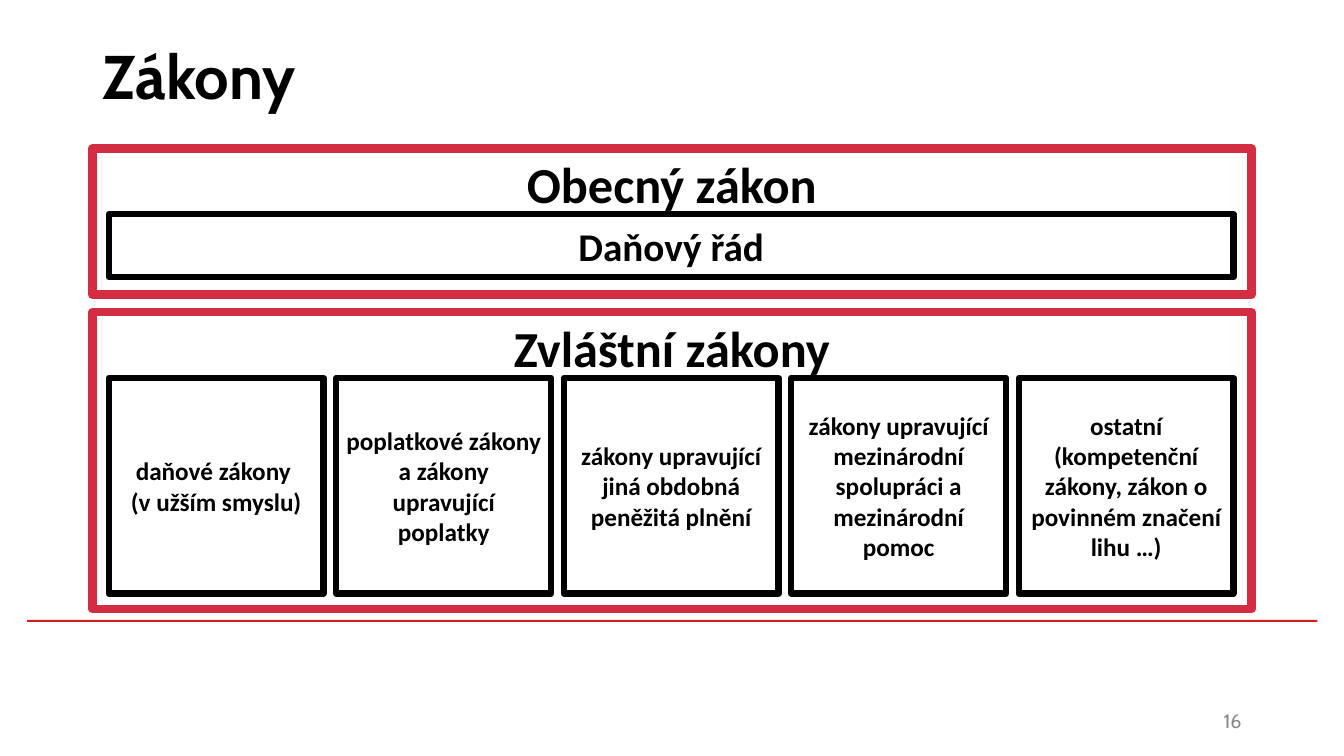
from dataclasses import dataclass

from pptx import Presentation
from pptx.dml.color import RGBColor
from pptx.enum.shapes import MSO_SHAPE
from pptx.enum.text import MSO_ANCHOR, PP_ALIGN
from pptx.util import Pt


@dataclass(frozen=True)
class Theme:
    """Colours, fonts and sizes of the slide."""
    black: str = "000000"
    white: str = "FFFFFF"
    frame: str = "D22D40"
    rule: str = "CD1F21"
    grey: str = "8C8C8C"
    head_font: str = "Cabin"
    body_font: str = "Calibri"
    title: int = 44
    heading: int = 36
    code: int = 28
    card: int = 18
    number: int = 14
    frame_line: float = 6
    card_line: float = 4.5


T = Theme()
SPECIAL_LAWS = [
    "daňové zákony \v(v užším smyslu)",
    "poplatkové zákony a zákony upravující poplatky",
    "zákony upravující jiná obdobná peněžitá plnění",
    "zákony upravující mezinárodní spolupráci a mezinárodní pomoc",
    "ostatní (kompetenční zákony, zákon o povinném značení lihu …)",
]


def write(sp, text, size, font=T.body_font, color=T.black, bold=True,
          align=PP_ALIGN.CENTER, anchor=MSO_ANCHOR.MIDDLE):
    """Put formatted text into a shape."""
    tf = sp.text_frame
    tf.word_wrap = True
    tf.vertical_anchor = anchor
    p = tf.paragraphs[0]
    p.text = text
    p.alignment = align
    for r in p.runs:
        r.font.size = Pt(size)
        r.font.name = font
        r.font.bold = bold
        r.font.color.rgb = RGBColor.from_string(color)


def add_box(s, box, fill=T.white, line=None, width=0):
    """Draw a rectangle, outlined if a line colour is given."""
    sp = s.shapes.add_shape(MSO_SHAPE.RECTANGLE, *map(Pt, box))
    sp.shadow.inherit = False
    sp.fill.solid()
    sp.fill.fore_color.rgb = RGBColor.from_string(fill)
    if line:
        sp.line.color.rgb = RGBColor.from_string(line)
        sp.line.width = Pt(width)
    else:
        sp.line.fill.background()
    return sp


def add_label(s, box, text, size, **fmt):
    """Add a text box."""
    write(s.shapes.add_textbox(*map(Pt, box)), text, size, **fmt)


def add_group(s, box, heading, laws, size, card_height, gap=9):
    """Draw a headed frame with a row of equal cards inside."""
    x, y, w, h = box
    frame = add_box(s, box, line=T.frame, width=T.frame_line)
    write(frame, heading, T.heading, anchor=MSO_ANCHOR.TOP)
    left, inner = x + 11.7, w - 24.5
    card_width = (inner - gap * (len(laws) - 1)) / len(laws)
    for i, law in enumerate(laws):
        card = add_box(s, (left + i * (card_width + gap), y + 47,
                           card_width, card_height),
                       line=T.black, width=T.card_line)
        write(card, law, size)


def build_slide(prs):
    """Compose the overview of laws."""
    s = prs.slides.add_slide(prs.slide_layouts[6])
    add_box(s, (19.4, 442.8, 921.6, 1.5), fill=T.rule)
    add_label(s, (66, 1.5, 828, 104.5), "Zákony", T.title,
              font=T.head_font, align=PP_ALIGN.LEFT)
    add_group(s, (66, 223, 828, 212), "Zvláštní zákony", SPECIAL_LAWS,
              T.card, 154)
    add_group(s, (66, 106, 828, 104.5), "Obecný zákon", ["Daňový řád"],
              T.code, 45)
    add_label(s, (678, 500.5, 216, 28.8), "16", T.number, font=T.head_font,
              color=T.grey, bold=False, align=PP_ALIGN.RIGHT)


def main():
    """Build and save the presentation."""
    prs = Presentation()
    prs.slide_width, prs.slide_height = Pt(960), Pt(540)
    build_slide(prs)
    prs.save("out.pptx")


if __name__ == "__main__":
    main()
